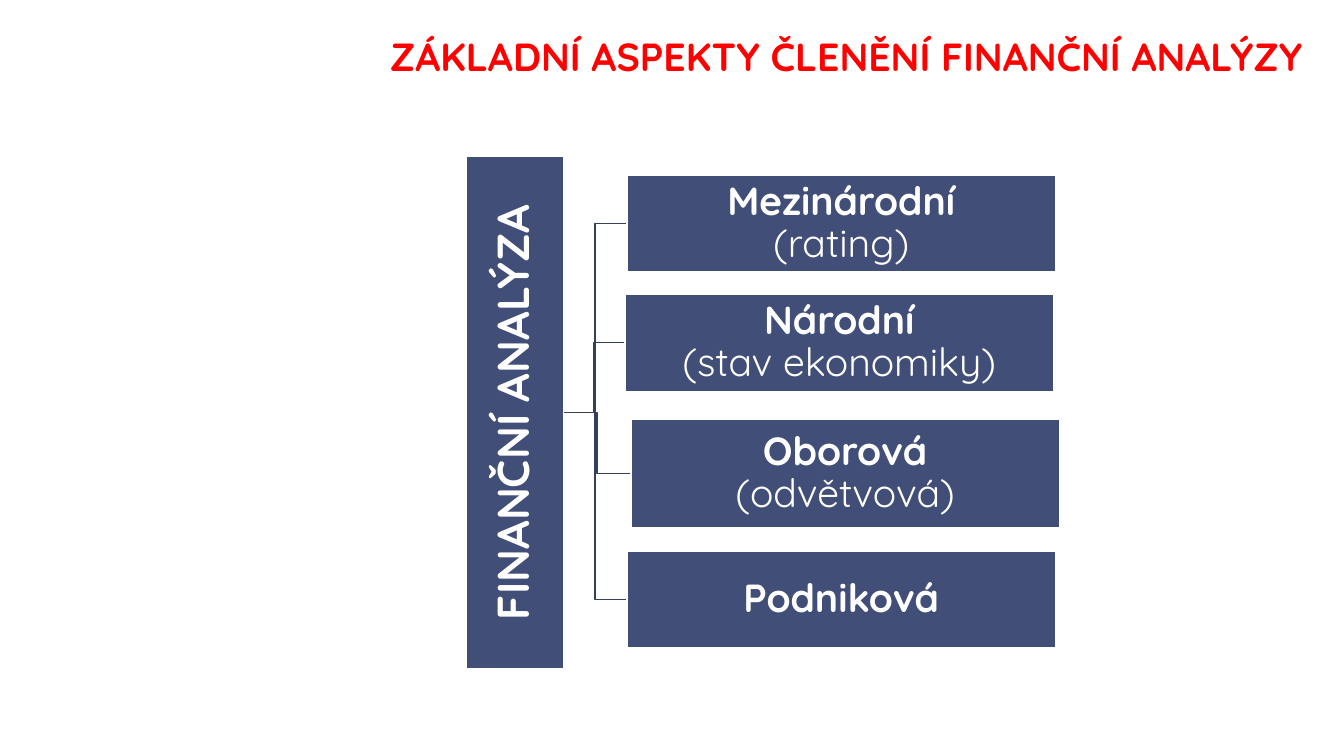
from lxml import etree
from pptx import Presentation
from pptx.dml.color import RGBColor
from pptx.enum.shapes import MSO_CONNECTOR, MSO_SHAPE
from pptx.enum.text import MSO_ANCHOR, PP_ALIGN
from pptx.oxml.ns import qn
from pptx.util import Cm, Pt

ELBOW = MSO_CONNECTOR.ELBOW
RECT = MSO_SHAPE.RECTANGLE
TOP, MIDDLE = MSO_ANCHOR.TOP, MSO_ANCHOR.MIDDLE
CENTER = PP_ALIGN.CENTER

FONT = "Quicksand"
COLORS = {"title": "FF0000", "box": "414E77", "line": "343E5F", "white": "FFFFFF"}

# Left, top and height in cm, then the lines of text
LEVELS = [
    (15.8, 4.42, 2.44, ["Mezinárodní", "(rating)"]),
    (15.75, 7.42, 2.44, ["Národní", "(stav ekonomiky)"]),
    (15.9, 10.57, 2.74, ["Oborová", "(odvětvová)"]),
    (15.8, 13.89, 2.44, ["Podniková"]),
]


def rgb(name):
    return RGBColor.from_string(COLORS[name])


def write(shape, lines, size=28, color="white", anchor=MIDDLE, space=0.9,
          inset=(0.05, 0.05)):
    """Fill a shape with centred lines, the first one bold."""
    frame = shape.text_frame
    frame.word_wrap = True
    frame.vertical_anchor = anchor
    frame.margin_left = frame.margin_right = Cm(inset[0])
    frame.margin_top = frame.margin_bottom = Cm(inset[1])
    for i, line in enumerate(lines):
        para = frame.paragraphs[0] if i == 0 else frame.add_paragraph()
        para.alignment = CENTER
        para.line_spacing = space
        run = para.add_run()
        run.text = line
        font = run.font
        font.name, font.size, font.bold = FONT, Pt(size), i == 0
        font.color.rgb = rgb(color)


def box(slide, left, top, width, height, lines, size=28, turn=0):
    shape = slide.shapes.add_shape(RECT, Cm(left), Cm(top), Cm(width), Cm(height))
    shape.shadow.inherit = False
    shape.rotation = turn
    shape.fill.solid()
    shape.fill.fore_color.rgb = rgb("box")
    shape.line.color.rgb = rgb("white")
    shape.line.width = Pt(1)
    write(shape, lines, size=size)


def link(slide, x1, y1, x2, y2):
    line = slide.shapes.add_connector(ELBOW, Cm(x1), Cm(y1), Cm(x2), Cm(y2))
    line.line.color.rgb = rgb("line")
    line.line.width = Pt(1)
    etree.SubElement(line._element.spPr, qn("a:effectLst"))


def title(slide, left, top, width, height):
    area = slide.shapes.add_textbox(Cm(left), Cm(top), Cm(width), Cm(height))
    write(area, ["ZÁKLADNÍ ASPEKTY ČLENĚNÍ FINANČNÍ ANALÝZY"], color="title",
          anchor=TOP, space=0.95, inset=(0.33, 0.18))


def tree(slide, left, top, width, height, level=10.8):
    """Upright root box in the given area, joined to every level."""
    right, middle = left + width, top + height / 2
    for x, y, tall, _ in reversed(LEVELS):
        link(slide, right, middle, x, y + tall / 2)
    # The root lies flat around its centre and is then turned
    box(slide, left + (width - height) / 2, middle - width / 2, height, width,
        ["FINANČNÍ ANALÝZA"], size=32, turn=270)
    for x, y, tall, lines in LEVELS:
        box(slide, x, y, level, tall, lines)


def main():
    deck = Presentation()
    deck.slide_width, deck.slide_height = Cm(33.87), Cm(19.05)
    slide = deck.slides.add_slide(deck.slide_layouts[6])
    title(slide, 9.32, 0.71, 24, 3.45)
    tree(slide, 11.76, 3.94, 2.44, 12.9)
    deck.save("out.pptx")


if __name__ == "__main__":
    main()
